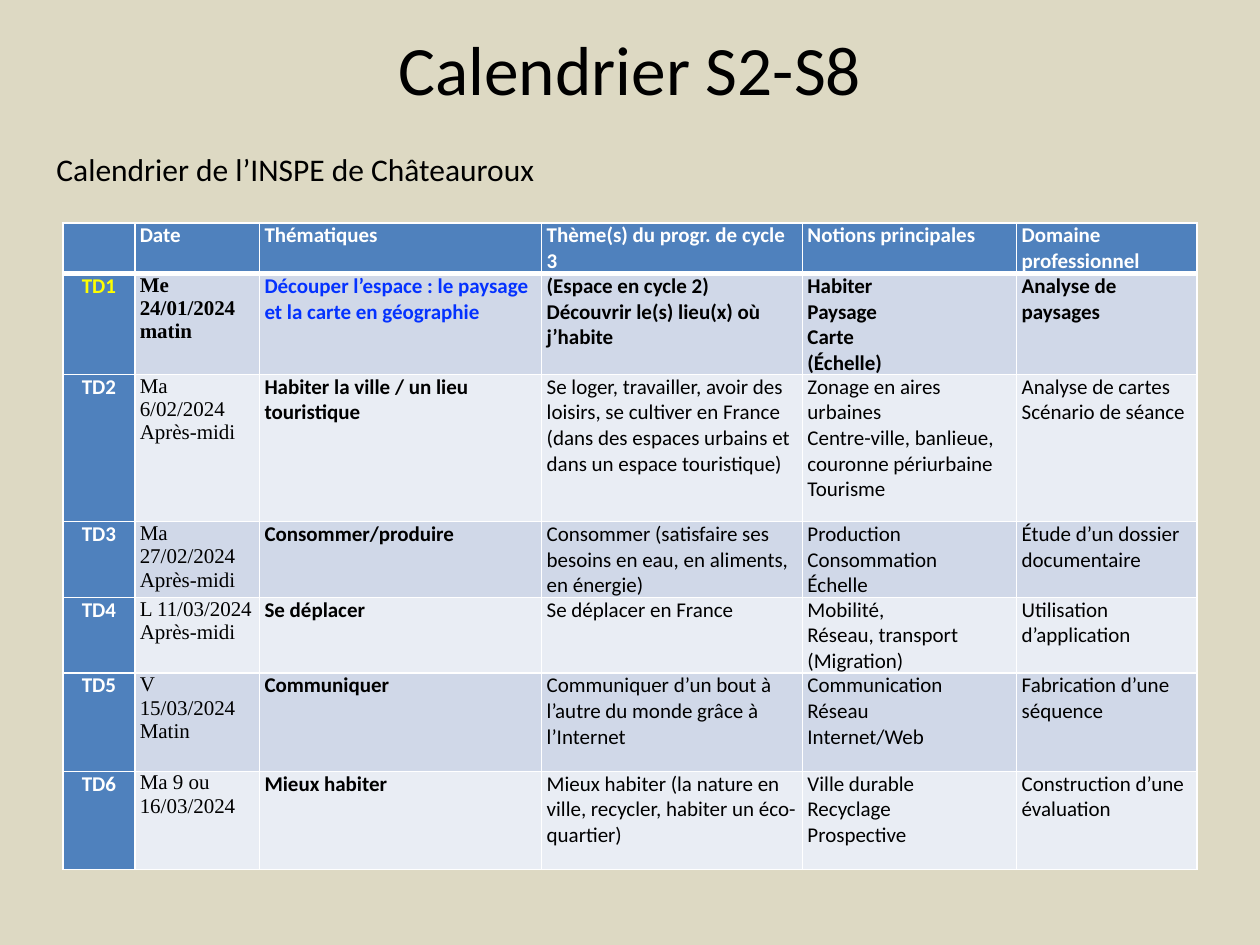
from dataclasses import dataclass

from pptx import Presentation
from pptx.dml.color import RGBColor
from pptx.enum.text import MSO_ANCHOR as Anchor, MSO_AUTO_SIZE as AutoSize, PP_ALIGN as Align
from pptx.oxml.ns import qn
from pptx.util import Inches, Pt
from lxml.etree import SubElement

WIDTH, HEIGHT = 10, 7.5
COLORS = {
    "background": "DDD9C3",
    "text": "000000",
    "header": "4F81BD",
    "odd": "D0D8E8",
    "even": "E9EDF4",
    "white": "FFFFFF",
    "current": "FFFF00",
    "current theme": "0432FF",
}
BODY_FONT, DATE_FONT = "Calibri", "Times New Roman"
COLUMN_UNITS = (57, 99, 224, 207, 170, 143)
ROW_UNIT = 0.195
HEADINGS = ("", "Date", "Thématiques", "Thème(s) du progr. de cycle 3",
            "Notions principales", "Domaine professionnel")


@dataclass
class Session:
    code: str
    date: str
    topic: str
    programme: str
    notions: str
    domain: str
    units: int
    current: bool = False

    def texts(self) -> tuple:
        return (self.code, self.date, self.topic, self.programme, self.notions, self.domain)


SESSIONS = (
    Session("TD1", "Me\n24/01/2024\nmatin",
            "Découper l’espace : le paysage et la carte en géographie",
            "(Espace en cycle 2)\nDécouvrir le(s) lieu(x) où j’habite",
            "Habiter\nPaysage\nCarte\n(Échelle)", "Analyse de paysages", 4, current=True),
    Session("TD2", "Ma 6/02/2024\nAprès-midi", "Habiter la ville / un lieu touristique",
            "Se loger, travailler, avoir des loisirs, se cultiver en France "
            "(dans des espaces urbains et dans un espace touristique)",
            "Zonage en aires urbaines\nCentre-ville, banlieue, couronne périurbaine\nTourisme",
            "Analyse de cartes\nScénario de séance", 6),
    Session("TD3", "Ma 27/02/2024\nAprès-midi", "Consommer/produire",
            "Consommer (satisfaire ses besoins en eau, en aliments, en énergie)",
            "Production\nConsommation\nÉchelle", "Étude d’un dossier documentaire", 3),
    Session("TD4", "L 11/03/2024\nAprès-midi", "Se déplacer ", "Se déplacer en France",
            "Mobilité,\nRéseau, transport\n(Migration)", "Utilisation d’application", 3),
    Session("TD5", "V 15/03/2024\nMatin", "Communiquer",
            "Communiquer d’un bout à l’autre du monde grâce à l’Internet",
            "Communication\nRéseau\nInternet/Web", "Fabrication d’une séquence", 4),
    Session("TD6", "Ma 9 ou 16/03/2024", "Mieux habiter",
            "Mieux habiter (la nature en ville, recycler, habiter un éco-quartier)",
            "Ville durable\nRecyclage\nProspective", "Construction d’une évaluation", 4),
)


def write(frame, text: str, *, size: float = 12, font: str = BODY_FONT, color: str = "text",
          bold: bool = False, align: Align = Align.LEFT) -> None:
    for index, line in enumerate(text.split("\n")):
        paragraph = frame.add_paragraph() if index else frame.paragraphs[0]
        paragraph.alignment = align
        paragraph.font.size = Pt(size)
        if line:
            run = paragraph.add_run()
            run.text = line
            run.font.size, run.font.name, run.font.bold = Pt(size), font, bold
            run.font.color.rgb = RGBColor.from_string(COLORS[color])


def style_cell(cell, fill: str, top: int = 1, bottom: int = 1) -> None:
    cell.margin_left = cell.margin_right = Inches(0.04)
    cell.margin_top = cell.margin_bottom = 0
    properties = cell._tc.get_or_add_tcPr()
    for side, points in (("L", 1), ("R", 1), ("T", top), ("B", bottom)):
        border = SubElement(properties, qn(f"a:ln{side}"), w=str(Pt(points)))
        border_fill = SubElement(border, qn("a:solidFill"))
        SubElement(border_fill, qn("a:srgbClr"), val=COLORS["white"])
    cell.fill.solid()
    cell.fill.fore_color.rgb = RGBColor.from_string(COLORS[fill])


def fill_header(table) -> None:
    for column, heading in enumerate(HEADINGS):
        cell = table.cell(0, column)
        style_cell(cell, "header", bottom=3)
        write(cell.text_frame, heading, color="white", bold=True)


def fill_session(table, row: int, session: Session) -> None:
    band = "odd" if row % 2 else "even"
    for column, text in enumerate(session.texts()):
        cell = table.cell(row, column)
        is_code, is_date, is_topic = (column == place for place in range(3))
        color = "text"
        if is_code:
            color = "current" if session.current else "white"
        elif is_topic and session.current:
            color = "current theme"
        style_cell(cell, "header" if is_code else band, top=3 if row == 1 else 1)
        write(cell.text_frame, text, color=color,
              font=DATE_FONT if is_date else BODY_FONT,
              bold=session.current or is_code or is_topic,
              align=Align.CENTER if is_code else Align.LEFT)


def add_calendar(slide) -> None:
    row_units = [2] + [session.units for session in SESSIONS]
    table_width = WIDTH * 0.9
    table = slide.shapes.add_table(
        len(row_units), len(COLUMN_UNITS), Inches(WIDTH * 0.05), Inches(1.77),
        Inches(table_width), Inches(ROW_UNIT * sum(row_units))).table
    for column, units in zip(table.columns, COLUMN_UNITS):
        column.width = Inches(table_width * units / sum(COLUMN_UNITS))
    for row, units in zip(table.rows, row_units):
        row.height = Inches(ROW_UNIT * units)
    fill_header(table)
    for row, session in enumerate(SESSIONS, start=1):
        fill_session(table, row, session)


def main() -> None:
    deck = Presentation()
    deck.slide_width, deck.slide_height = Inches(WIDTH), Inches(HEIGHT)
    slide = deck.slides.add_slide(deck.slide_layouts[5])
    slide.background.fill.solid()
    slide.background.fill.fore_color.rgb = RGBColor.from_string(COLORS["background"])

    title = slide.shapes.title
    title.left, title.top = Inches(WIDTH * 0.05), Inches(0.16)
    title.width, title.height = Inches(WIDTH * 0.9), Inches(HEIGHT * 0.1)
    title.text_frame.auto_size = AutoSize.NONE
    title.text_frame.vertical_anchor = Anchor.MIDDLE
    write(title.text_frame, "Calendrier S2-S8", size=39.6, align=Align.CENTER)

    subtitle = slide.shapes.add_textbox(Inches(0.35), Inches(1.14), Inches(4.04), Inches(0.4))
    subtitle.text_frame.word_wrap = False
    subtitle.text_frame.auto_size = AutoSize.SHAPE_TO_FIT_TEXT
    write(subtitle.text_frame, "Calendrier de l’INSPE de Châteauroux", size=18)

    add_calendar(slide)
    deck.save("out.pptx")


if __name__ == "__main__":
    main()
